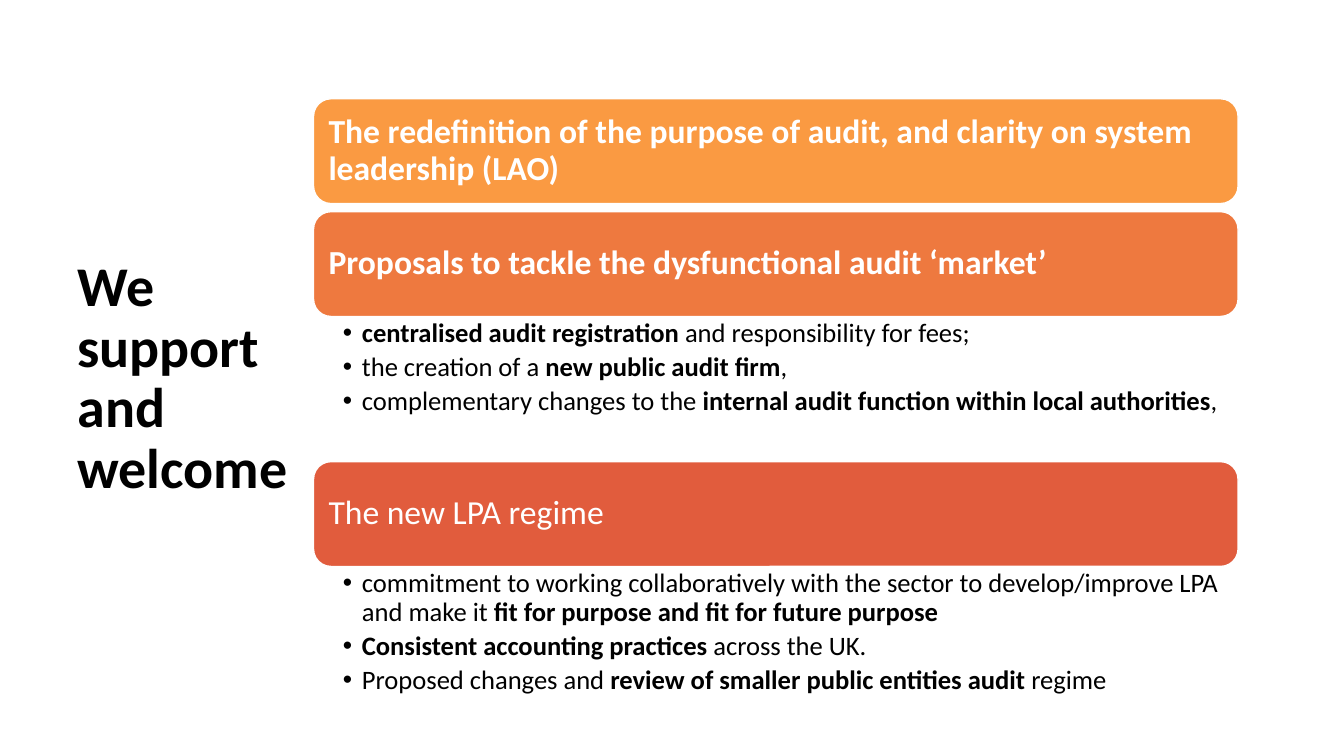
from lxml import etree
from pptx import Presentation
from pptx.dml.color import RGBColor
from pptx.enum.shapes import MSO_SHAPE
from pptx.enum.text import MSO_ANCHOR, PP_ALIGN
from pptx.oxml.ns import qn
from pptx.util import Inches, Pt

ROUNDED = MSO_SHAPE.ROUNDED_RECTANGLE
MIDDLE = MSO_ANCHOR.MIDDLE
TOP = MSO_ANCHOR.TOP
LEFT = PP_ALIGN.LEFT

FONT = "Calibri"
COLUMN_LEFT, COLUMN_WIDTH = 3.11, 9.17
BAR_HEIGHT = 1.04
BULLET_INDENT = 0.19

TITLE = [("We support and welcome", True)]
SECTIONS = [
    (0.98, "FA9A42", [("The redefinition of the purpose of audit, and clarity on system leadership (LAO)", True)], 0, []),
    (2.1, "EE793F", [("Proposals to tackle the dysfunctional audit ‘market’", True)], 1.44, [
        [("centralised audit registration ", True), ("and responsibility for fees;", False)],
        [("the creation of a ", False), ("new public audit firm", True), (",", False)],
        [("complementary changes to the ", False),
         ("internal audit function within local authorities", True), (",", False)],
    ]),
    (4.58, "E15C3D", [("The new LPA regime", False)], 1.36, [
        [("commitment to working collaboratively with the sector to develop/improve LPA and make it ", False),
         ("fit for purpose and fit for future purpose", True)],
        [("Consistent accounting practices ", True), ("across the UK.", False)],
        [("Proposed changes and ", False), ("review of smaller public entities audit ", True), ("regime", False)],
    ]),
]


def color(value):
    return RGBColor.from_string(value)


def apply_format(target, values):
    for name, value in values.items():
        setattr(target, name, value)


def set_frame(frame, anchor, left, top, right, bottom):
    apply_format(frame, {
        "word_wrap": True, "vertical_anchor": anchor,
        "margin_left": Inches(left), "margin_top": Inches(top),
        "margin_right": Inches(right), "margin_bottom": Inches(bottom),
    })


def write_paragraph(paragraph, pieces, size, ink, space_after=0):
    apply_format(paragraph, {
        "alignment": LEFT, "line_spacing": 0.9,
        "space_before": Pt(0), "space_after": Pt(space_after),
    })
    for words, bold in pieces:
        run = paragraph.add_run()
        run.text = words
        apply_format(run.font, {"name": FONT, "size": Pt(size), "bold": bold})
        run.font.color.rgb = color(ink)


def add_bullet(paragraph):
    properties = paragraph._p.get_or_add_pPr()
    properties.set("marL", str(Inches(BULLET_INDENT)))
    properties.set("indent", str(-Inches(BULLET_INDENT)))
    etree.SubElement(properties, qn("a:buFont")).set("typeface", "Arial")
    etree.SubElement(properties, qn("a:buChar")).set("char", "•")


def add_title(slide):
    title = slide.shapes.add_textbox(Inches(0.67), Inches(0.6), Inches(2.44), Inches(6.33))
    set_frame(title.text_frame, MIDDLE, 0.1, 0.05, 0.1, 0.05)
    write_paragraph(title.text_frame.paragraphs[0], TITLE, 40, "000000")


def add_bar(slide, top, fill, heading):
    bar = slide.shapes.add_shape(
        ROUNDED, Inches(COLUMN_LEFT), Inches(top), Inches(COLUMN_WIDTH), Inches(BAR_HEIGHT))
    bar.shadow.inherit = False
    bar.fill.solid()
    bar.fill.fore_color.rgb = color(fill)
    bar.line.color.rgb = color("FFFFFF")
    bar.line.width = Pt(1)
    set_frame(bar.text_frame, MIDDLE, 0.1, 0.1, 0.1, 0.1)
    write_paragraph(bar.text_frame.paragraphs[0], heading, 24, "FFFFFF")


def add_points(slide, top, height, points):
    details = slide.shapes.add_textbox(
        Inches(COLUMN_LEFT), Inches(top), Inches(COLUMN_WIDTH), Inches(height))
    frame = details.text_frame
    set_frame(frame, TOP, 0.29, 0.03, 0.19, 0.03)
    for index, pieces in enumerate(points):
        paragraph = frame.add_paragraph() if index else frame.paragraphs[0]
        write_paragraph(paragraph, pieces, 19, "000000", 3.8)
        add_bullet(paragraph)


def main():
    deck = Presentation()
    deck.slide_width, deck.slide_height = Inches(13.33), Inches(7.5)
    slide = deck.slides.add_slide(deck.slide_layouts[6])
    add_title(slide)
    for top, fill, heading, points_height, points in SECTIONS:
        add_bar(slide, top, fill, heading)
        if points:
            add_points(slide, top + BAR_HEIGHT, points_height, points)
    deck.save("out.pptx")


if __name__ == "__main__":
    main()
